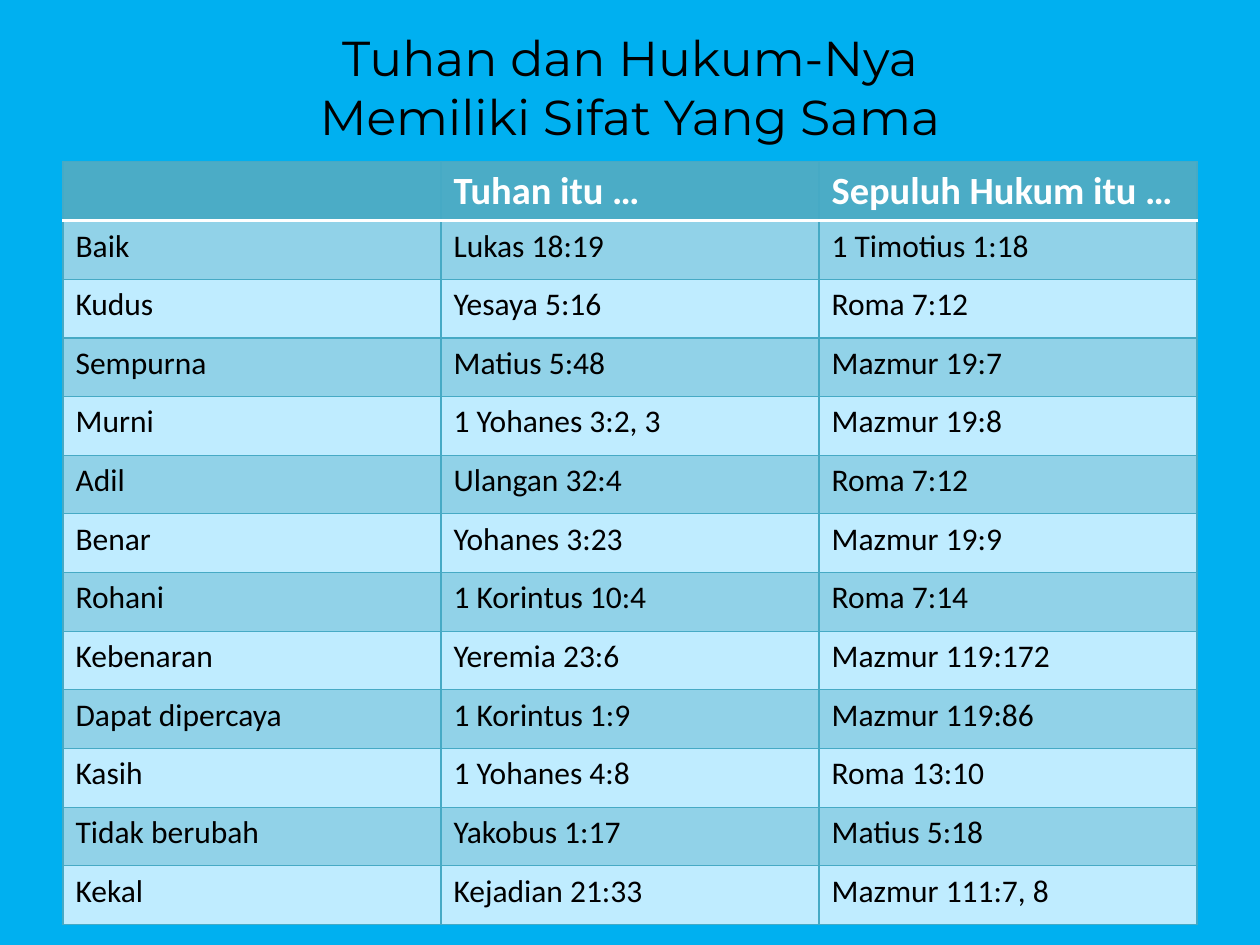
from typing import NamedTuple

from lxml import etree
from pptx import Presentation
from pptx.dml.color import RGBColor
from pptx.enum.text import MSO_AUTO_SIZE, PP_ALIGN
from pptx.oxml.ns import qn
from pptx.util import Inches, Pt

CENTER = PP_ALIGN.CENTER
NO_AUTOSIZE = MSO_AUTO_SIZE.NONE
BACKGROUND = "00B0F0"
GRID = "46AAC5"
BLACK = "000000"
WHITE = "FFFFFF"


class Border(NamedTuple):
    color: str
    points: float


class RowStyle(NamedTuple):
    fill: str
    text: str
    size: int
    bold: bool


class Trait(NamedTuple):
    name: str
    god: str
    law: str


GRID_LINE = Border(GRID, 0.75)
HEADER_RULE = Border(WHITE, 2)
HEADER = RowStyle("4BACC6", WHITE, 22, True)
BANDS = (RowStyle("BFECFF", BLACK, 18, False), RowStyle("91D2E8", BLACK, 18, False))
TITLE = ("Tuhan dan Hukum-Nya", "Memiliki Sifat Yang Sama")
TRAITS = (
    Trait("", "Tuhan itu …", "Sepuluh Hukum itu …"),
    Trait("Baik", "Lukas 18:19", "1 Timotius 1:18"),
    Trait("Kudus", "Yesaya 5:16", "Roma 7:12"),
    Trait("Sempurna", "Matius 5:48", "Mazmur 19:7"),
    Trait("Murni", "1 Yohanes 3:2, 3", "Mazmur 19:8"),
    Trait("Adil", "Ulangan 32:4", "Roma 7:12"),
    Trait("Benar", "Yohanes 3:23", "Mazmur 19:9"),
    Trait("Rohani", "1 Korintus 10:4", "Roma 7:14"),
    Trait("Kebenaran", "Yeremia 23:6", "Mazmur 119:172"),
    Trait("Dapat dipercaya", "1 Korintus 1:9", "Mazmur 119:86"),
    Trait("Kasih", "1 Yohanes 4:8", "Roma 13:10"),
    Trait("Tidak berubah", "Yakobus 1:17", "Matius 5:18"),
    Trait("Kekal", "Kejadian 21:33", "Mazmur 111:7, 8"),
)


def rgb(color: str) -> RGBColor:
    """Turn a hex string into a colour."""
    return RGBColor.from_string(color)


def format_text(text_frame, font: str, size: int, color: str, bold: bool = False) -> None:
    """Give every run of a text frame the same look."""
    for paragraph in text_frame.paragraphs:
        for run in paragraph.runs:
            run.font.name = font
            run.font.size = Pt(size)
            run.font.bold = bold
            run.font.color.rgb = rgb(color)


def add_border(cell, side: str, border: Border) -> None:
    """Draw one edge of a table cell."""
    line = etree.SubElement(cell._tc.get_or_add_tcPr(), qn(f"a:ln{side}"), w=str(Pt(border.points)))
    fill = etree.SubElement(line, qn("a:solidFill"))
    etree.SubElement(fill, qn("a:srgbClr"), val=border.color)


def fill_cell(cell, text: str, style: RowStyle, top: Border, bottom: Border) -> None:
    """Write and style one table cell."""
    cell.text_frame.text = text
    format_text(cell.text_frame, "Calibri", style.size, style.text, style.bold)
    for side, border in zip("LRTB", (GRID_LINE, GRID_LINE, top, bottom)):
        add_border(cell, side, border)
    cell.fill.solid()
    cell.fill.fore_color.rgb = rgb(style.fill)


def add_title(slide) -> None:
    """Add the two centred title lines."""
    frame = slide.shapes.add_textbox(Inches(1.5), Inches(0.17), Inches(7), Inches(0.92)).text_frame
    frame.word_wrap = False
    frame.auto_size = NO_AUTOSIZE
    frame.text = "\n".join(TITLE)
    for paragraph in frame.paragraphs:
        paragraph.alignment = CENTER
    format_text(frame, "Montserrat", 28, BLACK)


def add_traits(slide) -> None:
    """Add the table that compares the traits verse by verse."""
    table = slide.shapes.add_table(
        len(TRAITS), len(Trait._fields), Inches(0.5), Inches(1.28), Inches(9), Inches(6.05)
    ).table
    for index, trait in enumerate(TRAITS):
        style = BANDS[index % 2] if index else HEADER
        top = HEADER_RULE if index == 1 else GRID_LINE
        bottom = GRID_LINE if index else HEADER_RULE
        for cell, text in zip(table.rows[index].cells, trait):
            fill_cell(cell, text, style, top, bottom)


def main() -> None:
    """Build and save the slide."""
    deck = Presentation()
    deck.slide_width, deck.slide_height = Inches(10), Inches(7.5)
    slide = deck.slides.add_slide(deck.slide_layouts[6])
    slide.background.fill.solid()
    slide.background.fill.fore_color.rgb = rgb(BACKGROUND)
    add_traits(slide)
    add_title(slide)
    deck.save("out.pptx")


if __name__ == "__main__":
    main()
